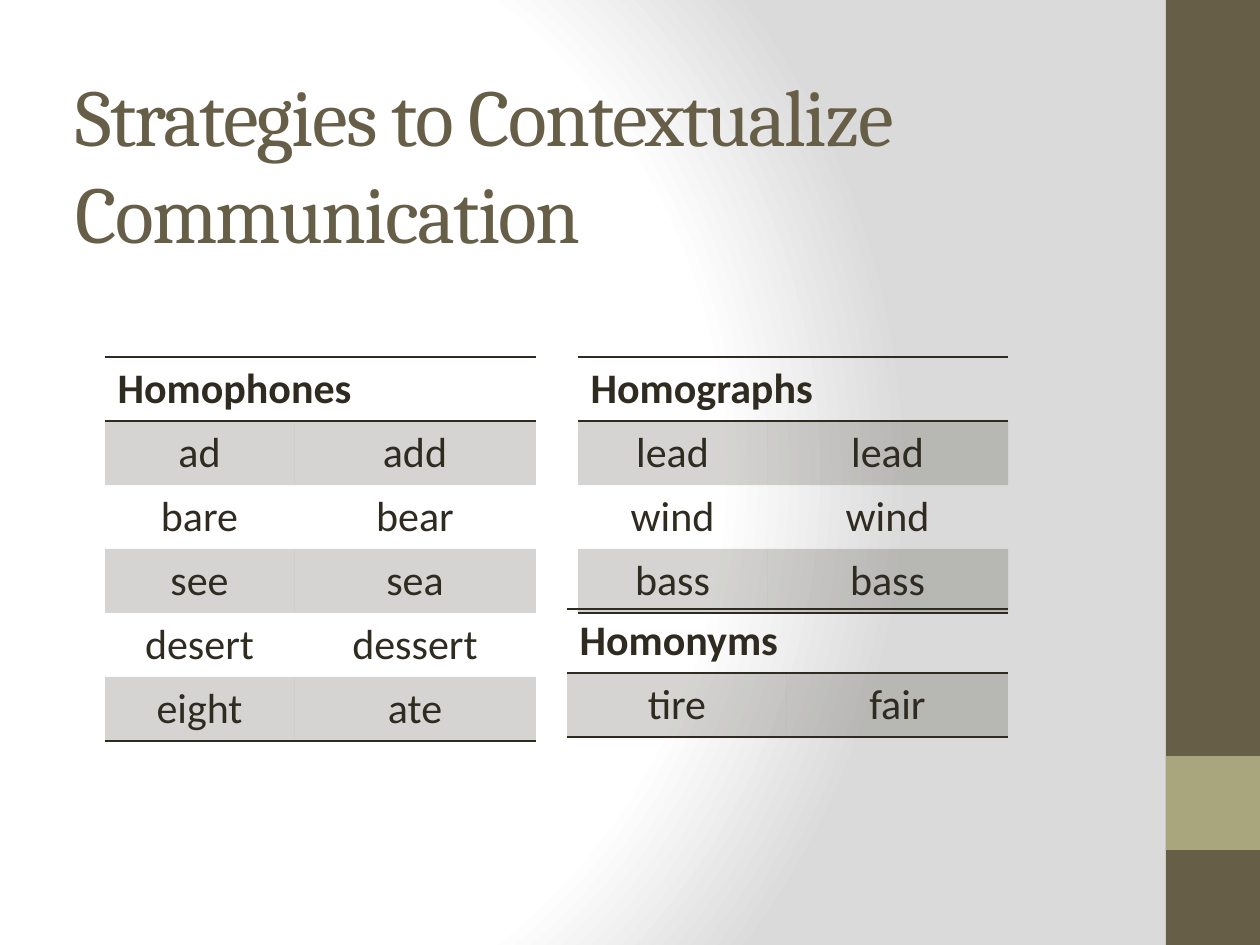
"""Build a slide with three tables of words that sound or look alike."""
from pptx import Presentation
from pptx.dml.color import RGBColor
from pptx.enum.shapes import MSO_SHAPE
from pptx.enum.text import MSO_ANCHOR, PP_ALIGN
from pptx.oxml import parse_xml
from pptx.oxml.ns import nsdecls
from pptx.util import Pt
from lxml.etree import SubElement

TITLE = "Strategies to Contextualize Communication"
INK, BROWN, OLIVE = "2F2B20", "675E47", "A9A57C"
BARS = [((1166, 0, 94, 945), BROWN), ((1166, 756, 94, 94), OLIVE)]
STOPS = [(0, "FFFFFF"), (75, "FFFFFF"), (100, "DADADA")]
TABLES = [
    ("Homophones", 105, 357, (189, 242),
     [("ad", "add"), ("bare", "bear"), ("see", "sea"),
      ("desert", "dessert"), ("eight", "ate")]),
    ("Homonyms", 567, 609, (220, 221), [("tire", "fair")]),
    ("Homographs", 578, 357, (189, 241),
     [("lead", "lead"), ("wind", "wind"), ("bass", "bass")]),
]
ROW = 64
PLAIN = "{2D5ABB26-0587-4C30-8999-92F81FD0307C}"


def px(n):
    return round(n * 914400 / 126)


def box(*nums):
    return [px(n) for n in nums]


def tint(hue):
    return RGBColor.from_string(hue)


def style(para, face, size, hue, bold=False):
    font = para.font
    font.name, font.size, font.bold = face, Pt(size), bold
    font.color.rgb = tint(hue)


def paint_back(slide):
    stops = "".join(
        f'<a:gs pos="{pos * 1000}"><a:srgbClr val="{hue}"/></a:gs>'
        for pos, hue in STOPS)
    slide.element.cSld.insert(0, parse_xml(
        f'<p:bg {nsdecls("p", "a")}><p:bgPr><a:gradFill rotWithShape="1">'
        f'<a:gsLst>{stops}</a:gsLst><a:path path="circle">'
        '<a:fillToRect l="20000" t="50000" r="100000" b="50000"/></a:path>'
        '</a:gradFill><a:effectLst/></p:bgPr></p:bg>'))


def add_bar(slide, place, hue):
    bar = slide.shapes.add_shape(MSO_SHAPE.RECTANGLE, *box(*place))
    bar.shadow.inherit = False
    bar.fill.solid()
    bar.fill.fore_color.rgb = tint(hue)
    bar.line.fill.background()


def add_title(slide):
    frame = slide.shapes.add_textbox(*box(63, 84, 1050, 158)).text_frame
    frame.word_wrap = True
    frame.vertical_anchor = MSO_ANCHOR.MIDDLE
    para = frame.paragraphs[0]
    run = para.add_run()
    run.text = TITLE
    style(para, "Cambria", 46, BROWN)
    run.font._element.set("spc", "-100")


def rule(cell, side, shown):
    fill = (f'<a:solidFill><a:srgbClr val="{INK}"/></a:solidFill>'
            if shown else "<a:noFill/>")
    cell._tc.get_or_add_tcPr().insert(0, parse_xml(
        f'<a:ln{side} {nsdecls("a")} w="12700">{fill}</a:ln{side}>'))


def shade(cell):
    cell.fill.solid()
    cell.fill.fore_color.rgb = tint(INK)
    hue = cell._tc.tcPr.find(".//{*}srgbClr")
    SubElement(hue, hue.tag.replace("srgbClr", "alpha"), val="20000")


def add_words(slide, head, left, top, cols, pairs):
    rows = [(head, "")] + pairs
    last = len(rows) - 1
    place = box(left, top, sum(cols), ROW * len(rows))
    table = slide.shapes.add_table(len(rows), 2, *place).table
    table.first_row = table.horz_banding = False
    table._tbl.tblPr.find("{*}tableStyleId").text = PLAIN
    for col, wide in zip(table.columns, cols):
        col.width = px(wide)
    for r, words in enumerate(rows):
        table.rows[r].height = px(ROW)
        for c, word in enumerate(words):
            cell = table.cell(r, c)
            cell.text = word
            para = cell.text_frame.paragraphs[0]
            para.alignment = PP_ALIGN.CENTER if r else PP_ALIGN.LEFT
            style(para, "Calibri", 24, INK, r == 0)
            if r % 2:
                shade(cell)
            else:
                cell.fill.background()
            rule(cell, "B", r in (0, last))
            rule(cell, "T", r in (0, 1))
    table.cell(0, 0).merge(table.cell(0, 1))


def main():
    deck = Presentation()
    deck.slide_width, deck.slide_height = box(1260, 945)
    slide = deck.slides.add_slide(deck.slide_layouts[6])
    paint_back(slide)
    for place, hue in BARS:
        add_bar(slide, place, hue)
    add_title(slide)
    for item in TABLES:
        add_words(slide, *item)
    deck.save("out.pptx")


if __name__ == "__main__":
    main()
